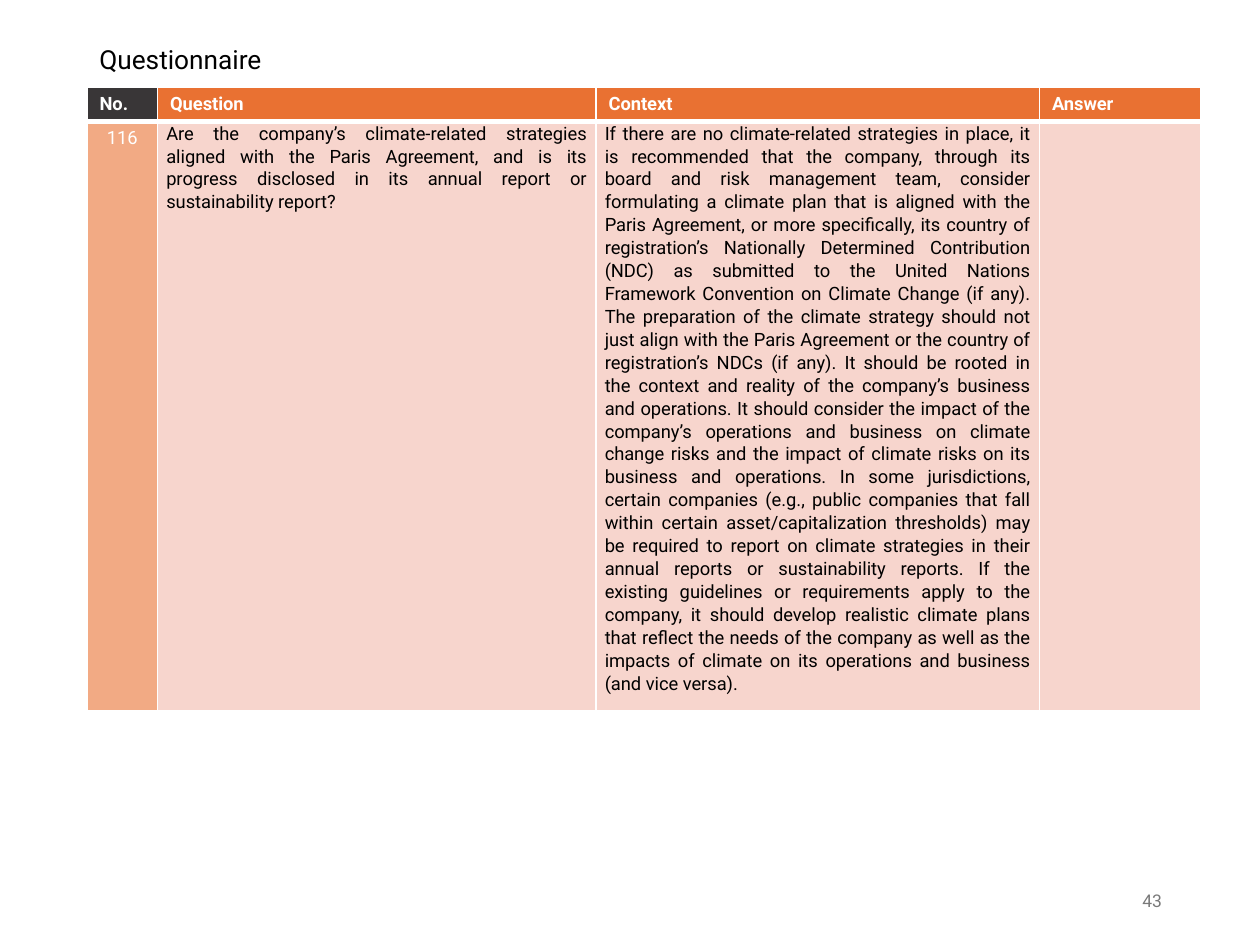
from dataclasses import dataclass

from lxml import etree
from pptx import Presentation
from pptx.dml.color import RGBColor
from pptx.enum import text
from pptx.oxml import ns
from pptx.util import Inches, Pt

COLORS = {
    "black": "000000", "white": "FFFFFF", "grey": "797979", "dark": "393637",
    "orange": "E97132", "peach": "F2AA84", "pale": "F7D5CD",
}
FONT = "Roboto"
LEFT, CENTER, RIGHT, JUSTIFY = (
    text.PP_ALIGN.LEFT, text.PP_ALIGN.CENTER, text.PP_ALIGN.RIGHT, text.PP_ALIGN.JUSTIFY)
BODY_SPACING = {"line_spacing": 1.07, "space_after": Pt(2)}
BODY_INSETS = {"margin_left": Inches(0.07), "margin_right": Inches(0.07),
               "margin_top": 0, "margin_bottom": 0}

QUESTION = (
    "Are the company’s climate-related strategies aligned with the Paris Agreement, and is its "
    "progress disclosed in its annual report or sustainability report?")
CONTEXT_SENTENCES = [
    "If there are no climate-related strategies in place, it is recommended that the company, "
    "through its board and risk management team, consider formulating a climate plan that is "
    "aligned with the Paris Agreement, or more specifically, its country of registration’s "
    "Nationally Determined Contribution (NDC) as submitted to the United Nations Framework "
    "Convention on Climate Change (if any).",
    "The preparation of the climate strategy should not just align with the Paris Agreement or "
    "the country of registration’s NDCs (if any).",
    "It should be rooted in the context and reality of the company’s business and operations.",
    "It should consider the impact of the company’s operations and business on climate change "
    "risks and the impact of climate risks on its business and operations.",
    "In some jurisdictions, certain companies (e.g., public companies that fall within certain "
    "asset/capitalization thresholds) may be required to report on climate strategies in their "
    "annual reports or sustainability reports.",
    "If the existing guidelines or requirements apply to the company, it should develop "
    "realistic climate plans that reflect the needs of the company as well as the impacts of "
    "climate on its operations and business (and vice versa).",
]


@dataclass
class Cell:
    text: str
    fill: str
    color: str = "white"
    bold: bool = False
    align: int = LEFT
    body: bool = False
    bottom: float = 1


def header(label: str, fill: str = "orange") -> Cell:
    return Cell(label, fill, bold=True, bottom=3)


def body(label: str) -> Cell:
    return Cell(label, "pale", "black", align=JUSTIFY, body=True)


COLUMNS = [0.56, 3.48, 3.52, 1.28]
ROWS = [0.26, 4.55]
CELLS = [
    [header("No.", "dark"), header("Question"), header("Context"), header("Answer")],
    [Cell("116", "peach", align=CENTER), body(QUESTION),
     body(" ".join(CONTEXT_SENTENCES)), Cell("", "pale")],
]


def set_all(target, values: dict) -> None:
    for name, value in values.items():
        setattr(target, name, value)


def rgb(name: str) -> RGBColor:
    return RGBColor.from_string(COLORS[name])


def write(tf, label: str, size: float, color: str, bold: bool = False, **paragraph) -> None:
    p = tf.paragraphs[0]
    set_all(p, paragraph)
    set_all(p.font, {"size": Pt(size), "name": FONT})
    if label:
        r = p.add_run()
        r.text = label
        set_all(r.font, {"size": Pt(size), "name": FONT, "bold": bold})
        r.font.color.rgb = rgb(color)


def add_text(s, box: tuple, label: str, size: float, color: str, **paragraph) -> None:
    tf = s.shapes.add_textbox(*map(Inches, box)).text_frame
    set_all(tf, {"word_wrap": True, "vertical_anchor": text.MSO_ANCHOR.MIDDLE})
    write(tf, label, size, color, **paragraph)


def add_borders(cell, bottom: float) -> None:
    """White edges, 1 pt except for the bottom; must come before the cell fill."""
    tc_pr = cell._tc.get_or_add_tcPr()
    for side, width in zip("LRTB", (1, 1, 1, bottom)):
        ln = etree.SubElement(tc_pr, ns.qn(f"a:ln{side}"), w=str(Pt(width)))
        solid = etree.SubElement(ln, ns.qn("a:solidFill"))
        etree.SubElement(solid, ns.qn("a:srgbClr"), val=COLORS["white"])


def fill_cell(cell, data: Cell) -> None:
    add_borders(cell, data.bottom)
    cell.fill.solid()
    cell.fill.fore_color.rgb = rgb(data.fill)
    if data.body:
        set_all(cell, BODY_INSETS)
    spacing = BODY_SPACING if data.body else {}
    write(cell.text_frame, data.text, 10.5, data.color, data.bold,
          alignment=data.align, **spacing)


def add_questions(s) -> None:
    box = (0.69, 0.69, sum(COLUMNS), sum(ROWS))
    table = s.shapes.add_table(len(ROWS), len(COLUMNS), *map(Inches, box)).table
    for column, width in zip(table.columns, COLUMNS):
        column.width = Inches(width)
    for row, height, cells in zip(table.rows, ROWS, CELLS):
        row.height = Inches(height)
        for cell, data in zip(row.cells, cells):
            fill_cell(cell, data)


def main() -> None:
    prs = Presentation()
    set_all(prs, {"slide_width": Inches(10), "slide_height": Inches(7.5)})
    s = prs.slides.add_slide(prs.slide_layouts[6])
    add_text(s, (0.69, 0.27, 8.62, 0.42), "Questionnaire", 15, "black", line_spacing=0.9)
    add_questions(s)
    add_text(s, (6.58, 6.95, 2.74, 0.4), "43", 10, "grey", alignment=RIGHT)
    prs.save("out.pptx")


if __name__ == "__main__":
    main()
